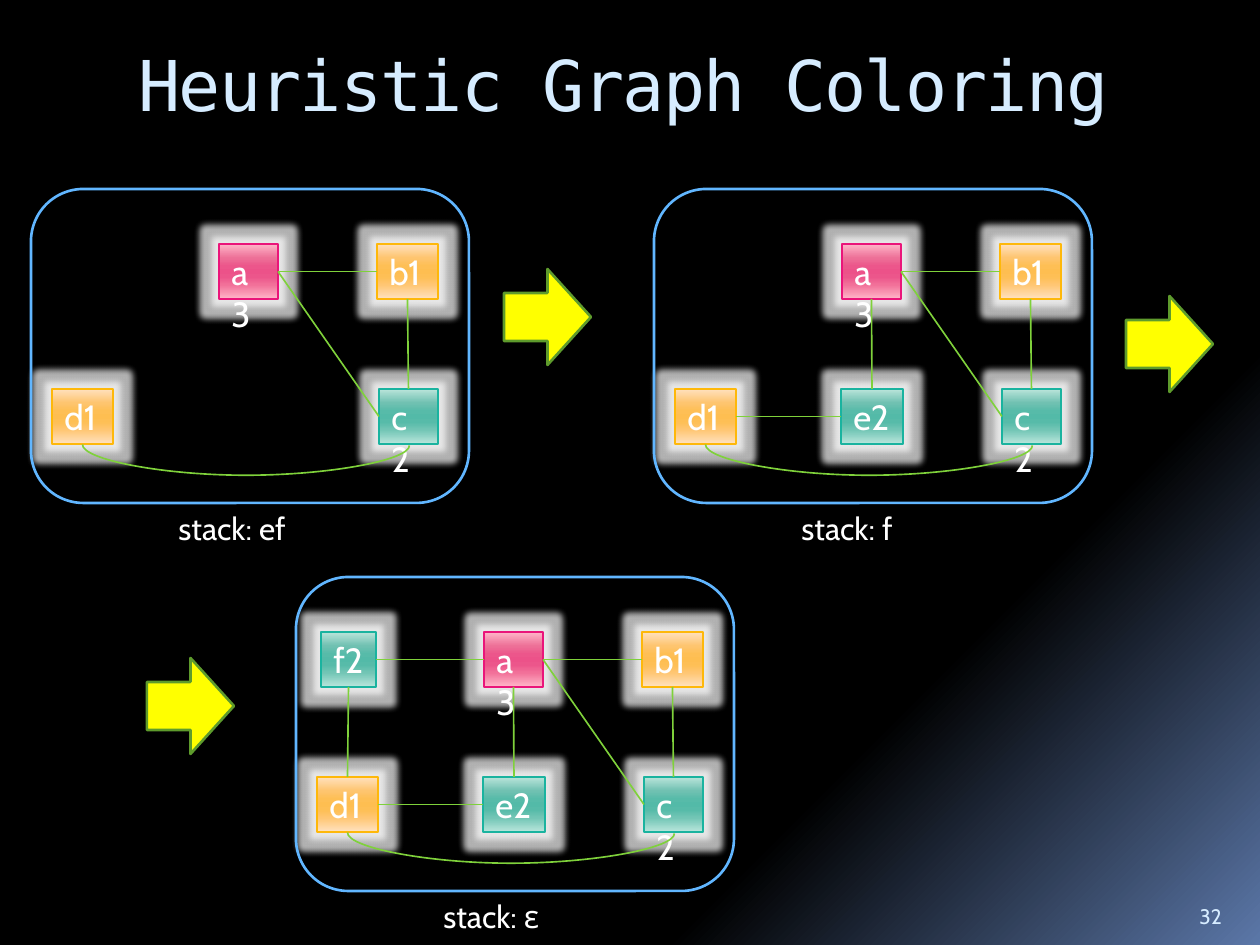
from lxml.etree import SubElement as Sub
from pptx import Presentation
from pptx.dml.color import RGBColor as Rgb
from pptx.enum.shapes import MSO_CONNECTOR as Conn, MSO_SHAPE as Kind
from pptx.enum.text import MSO_ANCHOR as Anchor, MSO_AUTO_SIZE as Auto, PP_ALIGN as Align
from pptx.oxml.ns import qn
from pptx.util import Emu, Pt

HEX = {
    "white": "FFFFFF", "pale": "D6ECFF", "edge": "7FD13B", "frame": "61B6FF",
    "arrow": "FFFF00", "rim": "5E9B2C",
    "pink": "EA157A", "gold": "FEB80A", "teal": "1AB39F",
}
STOPS = (0, 25, 40, 50, 60, 75, 100)
SHADES = {
    "pink": "FFB6C9 ED7198 EC568B EC5289 EC568B F2729A FFB6C9",
    "gold": "FFE1BF FEC570 FEBF55 FEBE51 FEBF55 FFC775 FFE1BF",
    "teal": "BBE5DB 71C1B2 57BBA9 53BAA8 57BBA9 74C6B6 B9E6DC",
}
BACK = ((65, "000000"), (73, "000000"), (100, "5B77A8"))
NODES = {
    "f": ("f2", "teal", 25, 55, 55),
    "a": ("a3", "pink", 188, 55, 59),
    "b": ("b1", "gold", 346, 55, 61),
    "d": ("d1", "gold", 21, 200, 61),
    "e": ("e2", "teal", 187, 200, 62),
    "c": ("c2", "teal", 348, 200, 59),
}
SIDE = 55
EDGES = ("fa", "ab", "fd", "de", "ae", "bc", "ac")
GRAPHS = (
    (296, 577, "fabdec", "stack: ε", 123),
    (31, 189, "abdc", "stack: ef", 135),
    (654, 189, "abdec", "stack: f", 120),
)
ARROWS = ((147, 658), (504, 269), (1126, 296))


def px(n):
    return Emu(round(n * 914400 / 126))


class Deck:
    def __init__(self):
        self.prs = Presentation()
        self.prs.slide_width, self.prs.slide_height = px(1260), px(945)
        self.slide = self.prs.slides.add_slide(self.prs.slide_layouts[6])
        self.shapes = self.slide.shapes
        self.font = "Cabin"

    def blend(self, fill, node, stops, angle):
        fill.gradient()
        fill.gradient_angle = angle
        group = next(node.iter(qn("a:gsLst")))
        for old in list(group):
            group.remove(old)
        for pos, color in stops:
            stop = Sub(group, qn("a:gs"), pos=str(pos * 1000))
            Sub(stop, qn("a:srgbClr"), val=color)

    def back(self, stops):
        self.blend(self.slide.background.fill, self.slide.element, stops, 315)

    def put(self, shape, text, size, color, font=None):
        frame = shape.text_frame
        frame.text = text
        para = frame.paragraphs[0]
        para.alignment = Align.LEFT
        style = para.runs[0].font
        style.name = font or self.font
        style.size = Pt(size)
        style.color.rgb = Rgb.from_string(HEX[color])
        return frame

    def label(self, x, y, w, h, text, size, color, font=None):
        box = self.shapes.add_textbox(px(x), px(y), px(w), px(h))
        self.put(box, text, size, color, font).word_wrap = True
        return box

    def shape(self, kind, x, y, w, h, line, width, fill=None):
        item = self.shapes.add_shape(kind, px(x), px(y), px(w), px(h))
        item.shadow.inherit = False
        item.line.color.rgb = Rgb.from_string(HEX[line])
        item.line.width = Pt(width)
        if fill:
            item.fill.solid()
            item.fill.fore_color.rgb = Rgb.from_string(HEX[fill])
        else:
            item.fill.background()
        return item

    def fit(self, frame):
        frame.word_wrap = False
        frame.auto_size = Auto.SHAPE_TO_FIT_TEXT

    def node(self, x, y, w, text, hue):
        item = self.shape(Kind.RECTANGLE, x, y, w, SIDE, hue, 0.94)
        self.blend(item.fill, item.element, zip(STOPS, SHADES[hue].split()), 270)
        glow = Sub(next(item.element.iter(qn("a:effectLst"))), qn("a:glow"), rad=str(px(13)))
        tint = Sub(glow, qn("a:srgbClr"), val=HEX["white"])
        Sub(tint, qn("a:alpha"), val="70000")
        frame = self.put(item, text, 20, "white")
        frame.vertical_anchor = Anchor.TOP
        self.fit(frame)

    def edge(self, x1, y1, x2, y2, kind=Conn.STRAIGHT):
        item = self.shapes.add_connector(kind, px(x1), px(y1), px(x2), px(y2))
        item.line.color.rgb = Rgb.from_string(HEX["edge"])
        item.line.width = Pt(0.94)
        Sub(item.element.spPr, qn("a:effectLst"))
        return item

    def curve(self, x, y, span, sag):
        mid = x + span / 2
        item = self.edge(mid, y - span / 2, mid + 1, y + span / 2, Conn.CURVE)
        form = item.element.spPr.find(qn("a:xfrm"))
        form.set("rot", "16200000")
        form.set("flipH", "1")
        guides = next(item.element.iter(qn("a:avLst")))
        Sub(guides, qn("a:gd"), name="adj1", fmla=f"val {sag * 100000}")

    def join(self, x, y, one, two):
        _, _, x1, y1, w1 = one
        _, _, x2, y2, w2 = two
        if abs(x1 - x2) < SIDE:
            self.edge(x + x1 + w1 / 2, y + y1 + SIDE, x + x2 + w2 / 2, y + y2)
        else:
            self.edge(x + x1 + w1, y + y1 + SIDE / 2, x + x2, y + y2 + SIDE / 2)

    def graph(self, x, y, names, text, width):
        for name in names:
            tag, hue, left, top, w = NODES[name]
            self.node(x + left, y + top, w, tag, hue)
        for one, two in EDGES:
            if one in names and two in names:
                self.join(x, y, NODES[one], NODES[two])
        self.curve(x + 51, y + 256, 327, 31)
        self.shape(Kind.ROUNDED_RECTANGLE, x, y, 438, 314, "frame", 1.5)
        box = self.label(x + 135, y + 314, width, 50, text, 18, "white")
        self.fit(box.text_frame)


def main():
    deck = Deck()
    deck.back(BACK)
    page = deck.label(1187, 885, 63, 50, "32", 12, "pale")
    page.text_frame.vertical_anchor = Anchor.BOTTOM
    title = deck.label(126, 31, 1071, 126, "Heuristic Graph Coloring", 40, "pale", "DejaVu Sans Mono")
    title.text_frame.margin_top = px(11)
    next(title.element.iter(qn("a:rPr"))).set("spc", "-100")
    for graph in GRAPHS:
        deck.graph(*graph)
    for x, y in ARROWS:
        deck.shape(Kind.RIGHT_ARROW, x, y, 87, 96, "rim", 1.5, "arrow")
    deck.prs.save("out.pptx")


if __name__ == "__main__":
    main()
